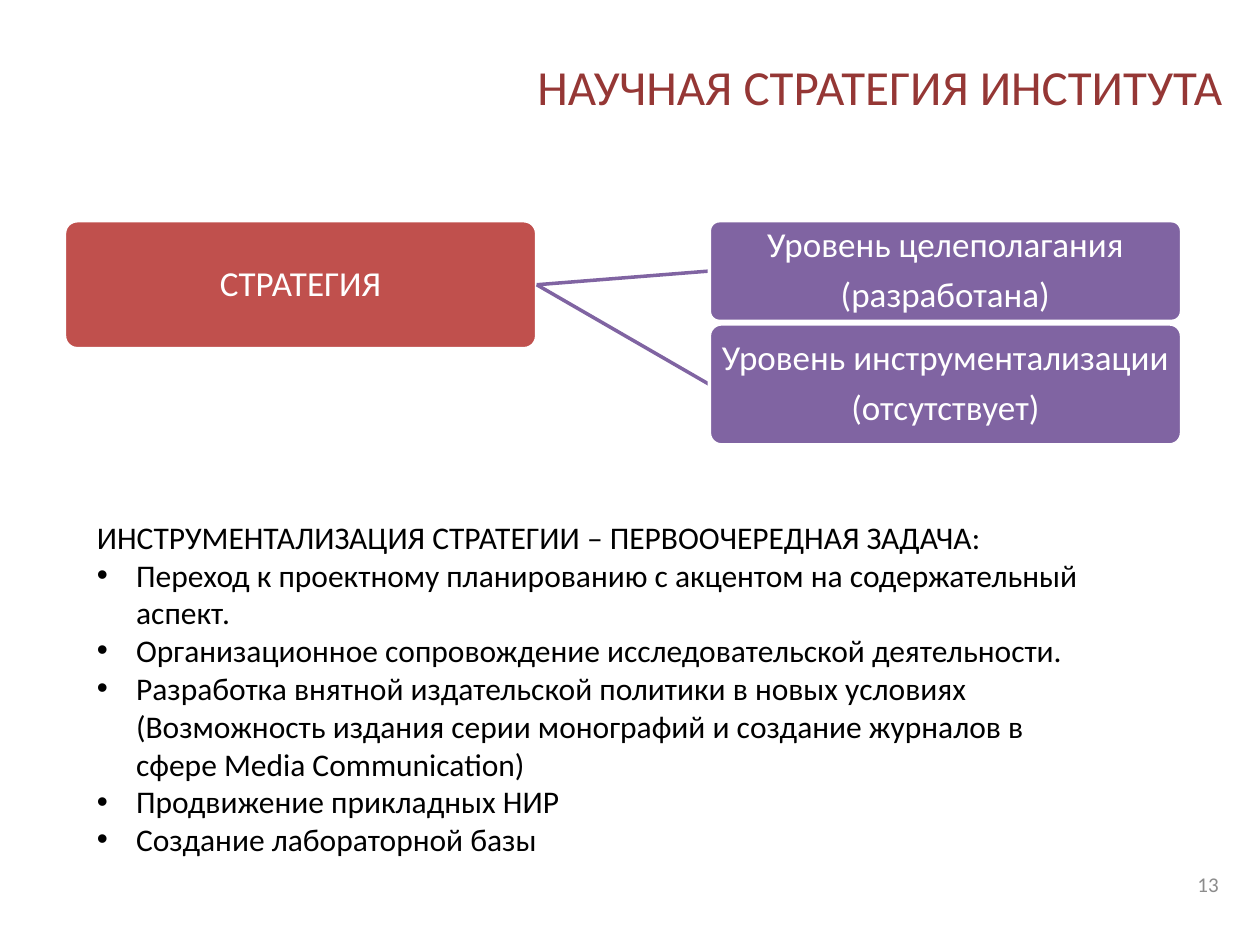
"""Build the slide on the institute's research strategy."""
from dataclasses import dataclass
from typing import Any

from lxml import etree
from pptx import Presentation
from pptx import util as u
from pptx.dml.color import RGBColor
from pptx.enum import shapes, text
from pptx.oxml import ns

WINE = RGBColor(0x95, 0x37, 0x35)
RED = RGBColor(0xC0, 0x50, 0x4D)
VIOLET = RGBColor(0x80, 0x64, 0xA2)
GREY = RGBColor(0x8C, 0x8C, 0x8C)
WHITE = RGBColor(0xFF, 0xFF, 0xFF)
BLACK = RGBColor(0, 0, 0)
MID = text.MSO_ANCHOR.MIDDLE
LEFT, CENTER, RIGHT = text.PP_ALIGN.LEFT, text.PP_ALIGN.CENTER, text.PP_ALIGN.RIGHT


@dataclass
class Box:
    left: float
    top: float
    width: float
    height: float
    lines: list[str]
    fill: RGBColor | None = None


TITLE = Box(6.5, 0.76, 18.39, 1.96, ["НАУЧНАЯ СТРАТЕГИЯ ИНСТИТУТА"])
ROOT = Box(1.3, 4.45, 9.52, 2.58, ["СТРАТЕГИЯ"], RED)
LEVELS = [
    Box(14.3, 4.45, 9.52, 2.03, ["Уровень целеполагания", "(разработана)"], VIOLET),
    Box(14.3, 6.53, 9.52, 2.44, ["Уровень инструментализации", "(отсутствует)"], VIOLET),
]
TASKS = Box(1.7, 10.31, 20.8, 7.95, [
    "ИНСТРУМЕНТАЛИЗАЦИЯ СТРАТЕГИИ – ПЕРВООЧЕРЕДНАЯ ЗАДАЧА:",
    "Переход к проектному планированию с акцентом на содержательный аспект.",
    "Организационное сопровождение исследовательской деятельности.",
    "Разработка внятной издательской политики в новых условиях (Возможность "
    "издания серии монографий и создание журналов в сфере Media Communication)",
    "Продвижение прикладных НИР",
    "Создание лабораторной базы",
])
PAGE = Box(18.9, 17.32, 5.92, 1.02, ["13"])


def apply(item: Any, form: dict[str, Any]) -> None:
    """Set each named attribute of the item."""
    for name, value in form.items():
        setattr(item, name, value)


def area(box: Box) -> list[u.Length]:
    """Return the box's place and size as lengths."""
    return [u.Cm(n) for n in (box.left, box.top, box.width, box.height)]


def place(shape: Any, box: Box) -> None:
    """Move a placeholder to the box."""
    apply(shape, dict(zip(("left", "top", "width", "height"), area(box))))


def write(shape: Any, lines: list[str], size: int, color: RGBColor,
          align: text.PP_ALIGN, anchor: text.MSO_ANCHOR = MID,
          bullet: bool = False, **form: Any) -> None:
    """Fill a shape with evenly styled paragraphs."""
    frame = shape.text_frame
    apply(frame, {"word_wrap": True, "auto_size": text.MSO_AUTO_SIZE.NONE,
                  "vertical_anchor": anchor})
    frame.text = "\n".join(lines)
    for index, par in enumerate(frame.paragraphs):
        if bullet:
            mark(par, index > 0)
        apply(par, {"alignment": align, "space_before": u.Pt(0), **form})
        apply(par.font, {"size": u.Pt(size), "name": "Calibri"})
        par.font.color.rgb = color


def mark(par: Any, shown: bool) -> None:
    """Give a paragraph a hanging bullet or none at all."""
    props = par._p.get_or_add_pPr()
    hang = u.Cm(0.79) if shown else 0
    props.set("marL", str(hang))
    props.set("indent", str(-hang))
    if shown:
        font = etree.SubElement(props, ns.qn("a:buFont"))
        font.set("typeface", "Arial")
        etree.SubElement(props, ns.qn("a:buChar")).set("char", "•")
    else:
        etree.SubElement(props, ns.qn("a:buNone"))


def node(tree: Any, box: Box) -> Any:
    """Draw one rounded block of the scheme."""
    shape = tree.add_shape(shapes.MSO_SHAPE.ROUNDED_RECTANGLE, *area(box))
    shape.adjustments[0] = 0.1
    shape.shadow.inherit = False
    shape.fill.solid()
    shape.fill.fore_color.rgb = box.fill
    shape.line.color.rgb = WHITE
    shape.line.width = u.Pt(2)
    sides = ("left", "top", "right", "bottom")
    apply(shape.text_frame, {f"margin_{side}": u.Cm(0.03) for side in sides})
    write(shape, box.lines, 20, WHITE, CENTER, line_spacing=0.9, space_after=u.Pt(7))
    return shape


def branch(tree: Any, root: Any, box: Box) -> None:
    """Draw a block joined to the root by a line behind it."""
    link = tree.add_connector(shapes.MSO_CONNECTOR.STRAIGHT, 0, 0, 0, 0)
    link.line.color.rgb = VIOLET
    link.line.width = u.Pt(2)
    etree.SubElement(link._element.spPr, ns.qn("a:effectLst"))
    link.begin_connect(root, 3)
    link.end_connect(node(tree, box), 1)


def main() -> None:
    """Build and save the slide."""
    deck = Presentation()
    apply(deck, {"slide_width": u.Cm(25.4), "slide_height": u.Cm(19.05)})
    tree = deck.slides.add_slide(deck.slide_layouts[1]).shapes
    place(tree.title, TITLE)
    write(tree.title, TITLE.lines, 28, WINE, RIGHT)
    root = node(tree, ROOT)
    for level in LEVELS:
        branch(tree, root, level)
    write(tree.add_textbox(*area(PAGE)), PAGE.lines, 12, GREY, RIGHT)
    body = tree.placeholders[1]
    place(body, TASKS)
    write(body, TASKS.lines, 18, BLACK, LEFT, text.MSO_ANCHOR.TOP, bullet=True)
    deck.save("out.pptx")


if __name__ == "__main__":
    main()
